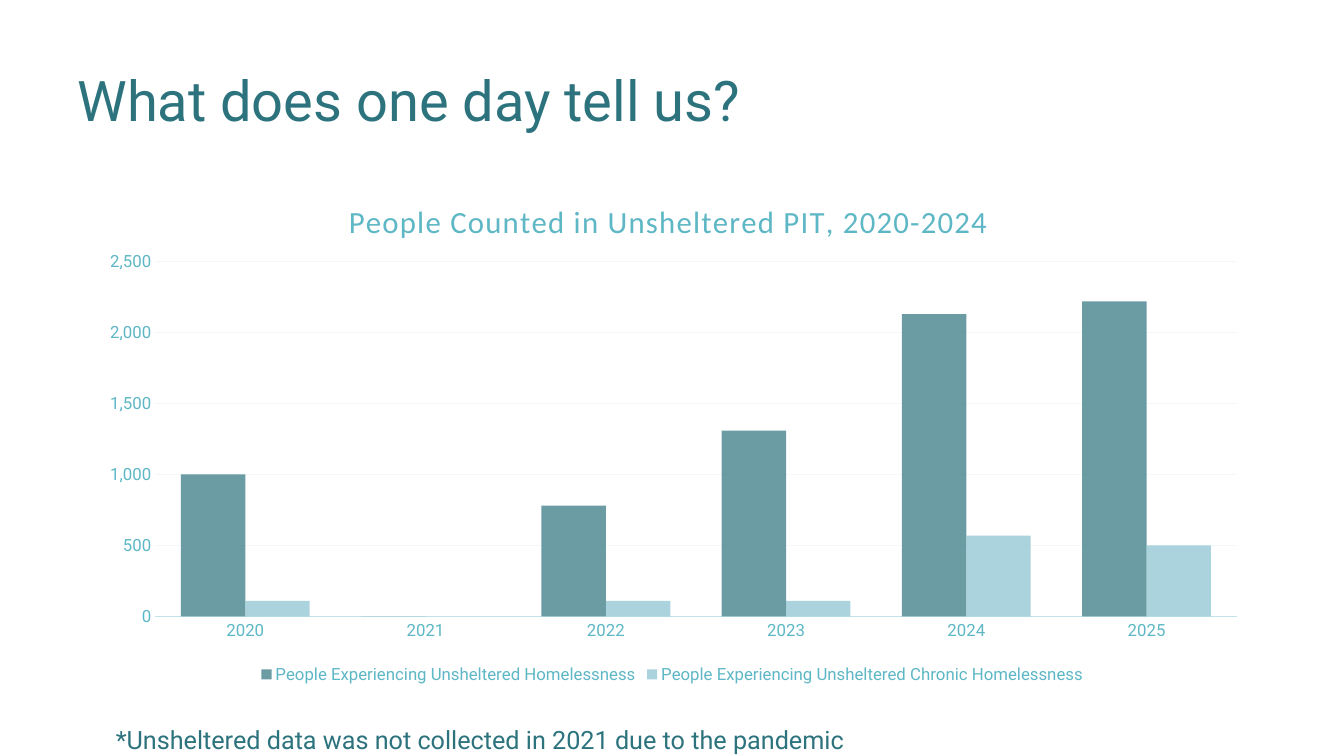
from lxml.etree import SubElement
from pptx import Presentation
from pptx.chart.data import CategoryChartData
from pptx.dml.color import RGBColor
from pptx.enum.chart import XL_CHART_TYPE, XL_LEGEND_POSITION, XL_TICK_MARK
from pptx.enum.text import MSO_ANCHOR
from pptx.oxml import parse_xml
from pptx.oxml.ns import nsdecls, qn
from pptx.util import Pt

PX = 9144  # 100 px to the inch
TEAL, AQUA = "2D737E", "5DB7C5"
FONT = "Roboto"
YEARS = ["2020", "2021", "2022", "2023", "2024", "2025"]
COUNTS = [
    ("People Experiencing Unsheltered Homelessness", TEAL,
     [1000, 0, 780, 1310, 2130, 2220]),
    ("People Experiencing Unsheltered Chronic Homelessness", "88C1CF",
     [110, None, 110, 110, 570, 500]),
]


def color(hex_text):
    return RGBColor.from_string(hex_text)


def emu(box):
    return [length * PX for length in box]


def style(font, size, hex_text, name=FONT):
    font.size, font.name, font.bold = Pt(size), name, False
    font.color.rgb = color(hex_text)


def add_text(slide, box, text, size=18, hex_text=TEAL,
             anchor=MSO_ANCHOR.TOP, bottom=5):
    frame = slide.shapes.add_textbox(*emu(box)).text_frame
    frame.word_wrap = True
    frame.vertical_anchor = anchor
    frame.margin_bottom = bottom * PX
    run = frame.paragraphs[0].add_run()
    run.text = text
    style(run.font, size, hex_text)


def set_layout(element, before, **places):
    """Fix a chart part at fractions of the chart area."""
    for old in element.findall(qn("c:layout")):
        element.remove(old)
    target = '<c:layoutTarget val="inner"/>' if "w" in places else ""
    modes = "".join(f'<c:{key}Mode val="edge"/>' for key in "xy")
    values = "".join(f'<c:{key} val="{value}"/>' for key, value in places.items())
    layout = parse_xml(f'<c:layout {nsdecls("c")}><c:manualLayout>{target}{modes}'
                       f'{values}</c:manualLayout></c:layout>')
    element.insert(before, layout)


def add_count_chart(slide, box):
    data = CategoryChartData(number_format="#,##0")
    data.categories = YEARS
    for name, _, values in COUNTS:
        data.add_series(name, values)
    chart = slide.shapes.add_chart(
        XL_CHART_TYPE.COLUMN_CLUSTERED, *emu(box), data).chart
    style(chart.font, 10, TEAL)

    # Chart title
    heading = chart.chart_title.text_frame.paragraphs[0].add_run()
    heading.text = "People Counted in Unsheltered PIT, 2020-2024"
    style(heading.font, 22, AQUA, "+mn-lt")
    heading.font._element.set("spc", "100")
    chart.chart_title.include_in_layout = False
    set_layout(chart.chart_title._element, 1, x=0.22, y=0.04)

    # Columns
    plot = chart.plots[0]
    plot.gap_width, plot.overlap = 80, 0
    plot.vary_by_categories = False
    set_layout(chart._chartSpace.chart.plotArea, 0, x=0.06, y=0.17, w=0.92, h=0.69)
    for series, (_, hex_text, _) in zip(plot.series, COUNTS):
        fill = series.format.fill
        fill.solid()
        fill.fore_color.rgb = color(hex_text)
        tint = series._element.find(".//" + qn("a:srgbClr"))
        SubElement(tint, qn("a:alpha")).set("val", "70000")

    # Axes
    years, people = chart.category_axis, chart.value_axis
    for axis in (years, people):
        axis.major_tick_mark = axis.minor_tick_mark = XL_TICK_MARK.NONE
        style(axis.tick_labels.font, 12, AQUA)
    years.format.line.color.rgb = color("C1E3E9")
    years.format.line.width = Pt(1.25)
    people.minimum_scale, people.maximum_scale, people.major_unit = 0, 2500, 500
    people.tick_labels.number_format = "#,##0"
    people.tick_labels.number_format_is_linked = False
    people.format.line.fill.background()
    people.major_gridlines.format.line.color.rgb = color("F3F9FB")
    people.major_gridlines.format.line.width = Pt(0.75)

    # Legend
    chart.has_legend = True
    chart.legend.position = XL_LEGEND_POSITION.BOTTOM
    chart.legend.include_in_layout = False
    style(chart.legend.font, 12, AQUA)


def build_count_slide(slide, box):
    left, top, width, height = box
    add_text(slide, (left + 67, top + 30, 1100, 112), "What does one day tell us?",
             size=40, anchor=MSO_ANCHOR.BOTTOM, bottom=10)
    add_count_chart(slide, (left + 84, top + 173, width - 167, height - 240))
    add_text(slide, (left + 105, top + 714, 870, 40),
             "*Unsheltered data was not collected in 2021 due to the pandemic")


def main():
    deck = Presentation()
    deck.slide_width, deck.slide_height = emu((1333, 750))
    slide = deck.slides.add_slide(deck.slide_layouts[6])
    build_count_slide(slide, (0, 0, 1333, 750))
    deck.save("out.pptx")


if __name__ == "__main__":
    main()
